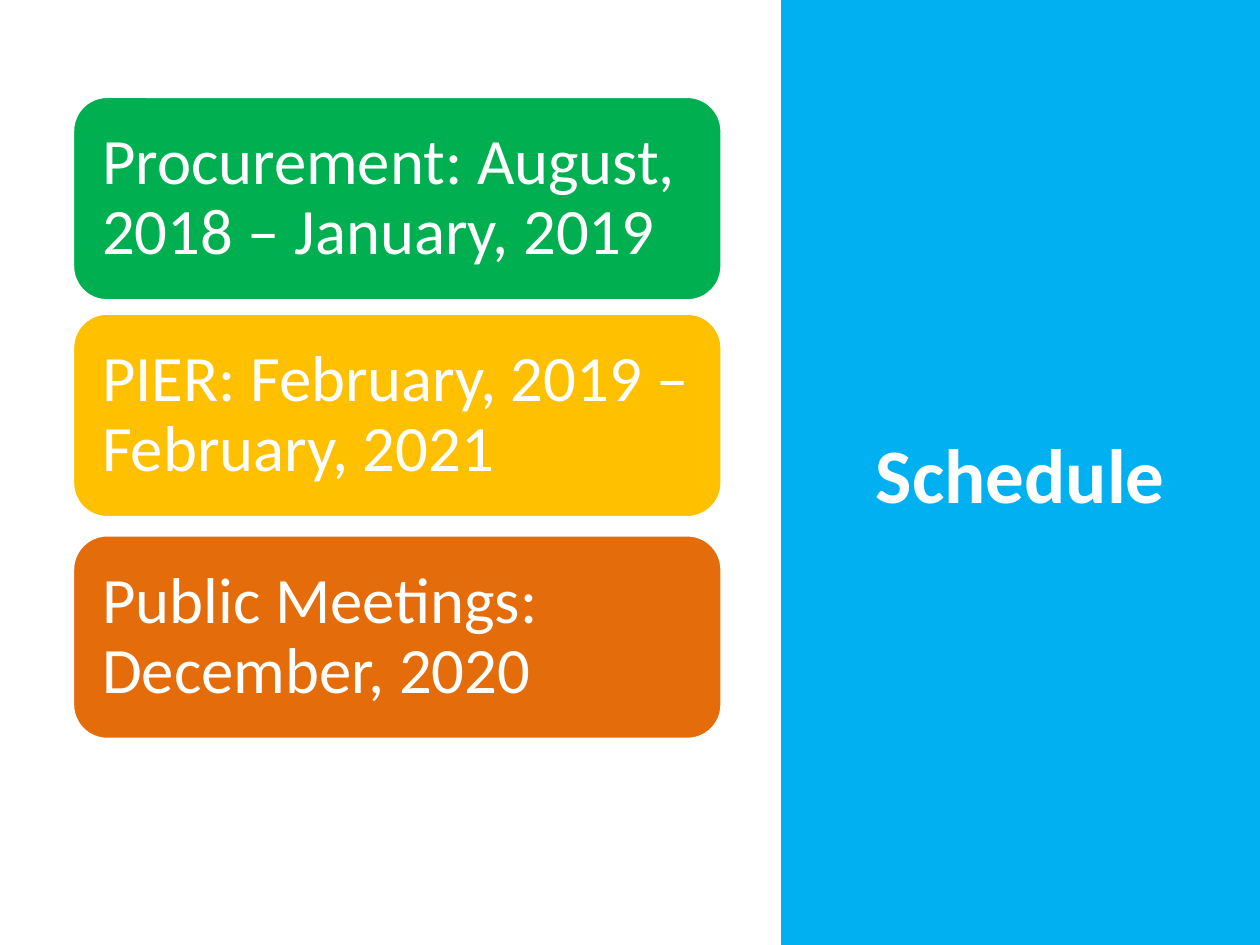
from pptx import Presentation
from pptx.dml.color import RGBColor
from pptx.enum.shapes import MSO_SHAPE
from pptx.enum.text import MSO_ANCHOR, PP_ALIGN
from pptx.util import Cm, Pt

COLORS = {
    "white": "FFFFFF",
    "blue": "00B0F0",
    "green": "00B050",
    "yellow": "FFC000",
    "orange": "E46C0A",
}
TITLE = "Schedule"
PHASES = [
    ("Procurement: August, 2018 – January, 2019", "green", 1.96),
    ("PIER: February, 2019 – February, 2021", "yellow", 6.33),
    ("Public Meetings: December, 2020", "orange", 10.8),
]
SLIDE_WIDTH, SLIDE_HEIGHT = 25.4, 19.05
PANEL_LEFT = 15.75
CARD_LEFT, CARD_WIDTH, CARD_HEIGHT = 1.48, 13.06, 4.09
CARD_INSET = 0.58


def color(name):
    return RGBColor.from_string(COLORS[name])


def add_block(slide, kind, box, fill, outline=None):
    shape = slide.shapes.add_shape(kind, *(Cm(length) for length in box))
    shape.shadow.inherit = False
    shape.fill.solid()
    shape.fill.fore_color.rgb = color(fill)
    if outline:
        shape.line.color.rgb = color(outline)
        shape.line.width = Pt(1)
    else:
        shape.line.fill.background()
    return shape


def write_text(shape, text, size, bold=False, align=PP_ALIGN.LEFT, spacing=1.0, inset=0.25):
    frame = shape.text_frame
    frame.word_wrap = True
    frame.vertical_anchor = MSO_ANCHOR.MIDDLE
    frame.margin_left = frame.margin_right = Cm(inset)
    frame.margin_top = frame.margin_bottom = Cm(inset)
    paragraph = frame.paragraphs[0]
    paragraph.alignment = align
    paragraph.line_spacing = spacing
    run = paragraph.add_run()
    run.text = text
    run.font.name = "Calibri"
    run.font.size = Pt(size)
    run.font.bold = bold
    run.font.color.rgb = color("white")


def main():
    presentation = Presentation()
    presentation.slide_width = Cm(SLIDE_WIDTH)
    presentation.slide_height = Cm(SLIDE_HEIGHT)
    slide = presentation.slides.add_slide(presentation.slide_layouts[6])

    panel_box = (PANEL_LEFT, 0, SLIDE_WIDTH - PANEL_LEFT, SLIDE_HEIGHT)
    panel = add_block(slide, MSO_SHAPE.RECTANGLE, panel_box, "blue")
    write_text(panel, TITLE, size=44, bold=True, align=PP_ALIGN.CENTER)

    for text, fill, top in PHASES:
        card_box = (CARD_LEFT, top, CARD_WIDTH, CARD_HEIGHT)
        card = add_block(slide, MSO_SHAPE.ROUNDED_RECTANGLE, card_box, fill, outline="white")
        # The rounded rectangle's own text area is already inset by its corners.
        corner_inset = CARD_HEIGHT * card.adjustments[0] * 0.29
        write_text(card, text, size=37, spacing=0.9, inset=CARD_INSET - corner_inset)

    presentation.save("out.pptx")


if __name__ == "__main__":
    main()
